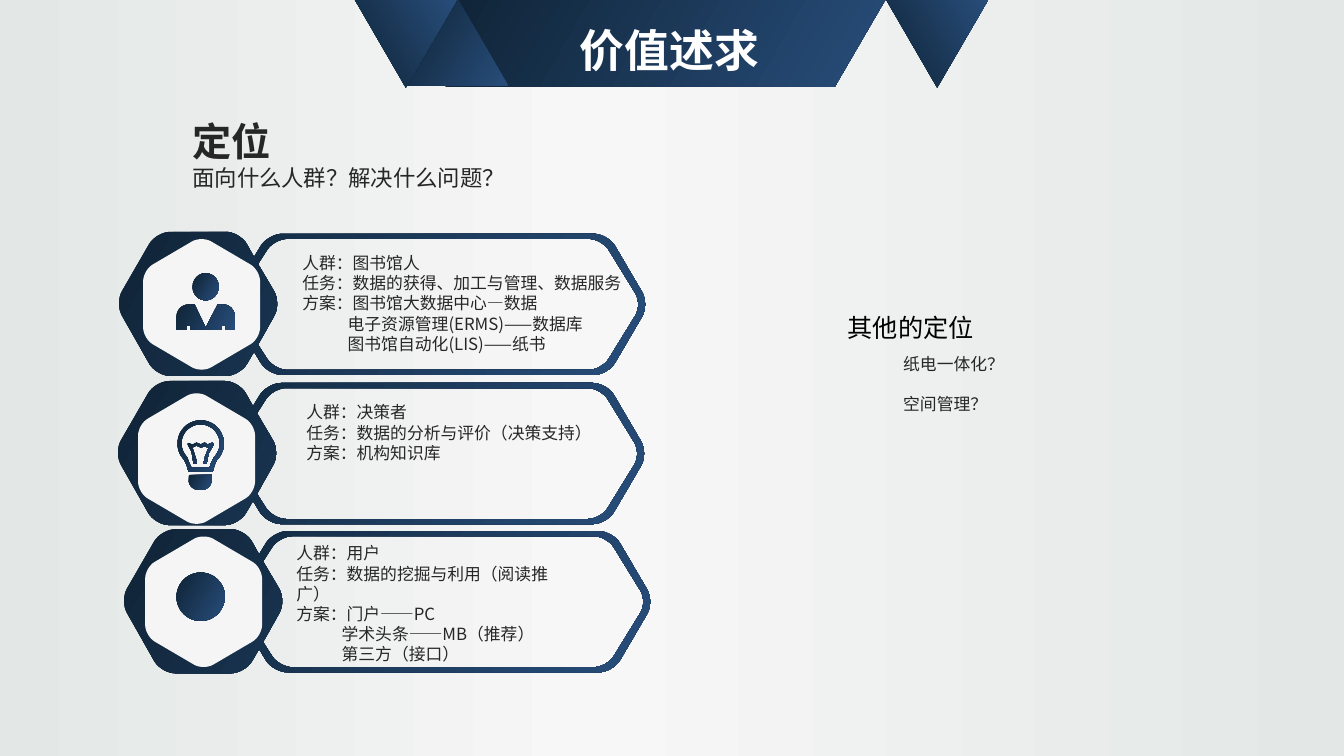
from copy import deepcopy
from math import cos, radians, sin

from pptx import Presentation
from pptx.dml.color import RGBColor
from pptx.enum.shapes import MSO_SHAPE
from pptx.enum.text import MSO_ANCHOR, PP_ALIGN
from pptx.oxml.ns import qn
from pptx.util import Inches, Pt

NAVY = RGBColor(0x0F, 0x24, 0x37)
BLUE = RGBColor(0x28, 0x4D, 0x7A)
PLATE = RGBColor(0xF5, 0xF5, 0xF5)
EDGE_GREY = RGBColor(0xE3, 0xE7, 0xE5)
CENTRE_GREY = RGBColor(0xF7, 0xF7, 0xF7)
INK = RGBColor(0x26, 0x26, 0x26)
BLACK = RGBColor(0, 0, 0)
WHITE = RGBColor(0xFF, 0xFF, 0xFF)
CJK_FONT = "Noto Sans CJK JP"

FRAME_OUTER = [
    (-0.04, 0.71, 0.14), (0.37, 0, 0.14), (1.2, 0, 0.14), (1.34, 0.25, 0),
    (1.48, 0.02, 0.14), (4.85, 0.02, 0.14), (5.26, 0.72, 0.14), (4.85, 1.42, 0.14),
    (1.48, 1.42, 0.14), (1.34, 1.19, 0), (1.2, 1.43, 0.14), (0.37, 1.43, 0.14),
]
FRAME_INNER = [
    (1.54, 0.07, 0.13), (1.38, 0.32, 0), (1.61, 0.71, 0.14), (1.38, 1.12, 0),
    (1.54, 1.37, 0.13), (4.79, 1.37, 0.13), (5.19, 0.72, 0.13), (4.79, 0.07, 0.13),
]
PLATE_HEXAGON = [
    (0, -0.68, 0.11), (0.58, -0.34, 0.11), (0.58, 0.34, 0.11),
    (0, 0.68, 0.11), (-0.58, 0.34, 0.11), (-0.58, -0.34, 0.11),
]
TORSO = [
    (1.75, 3.27, 0), (1.75, 3.02, 0.12), (1.93, 3.02, 0), (2.04, 3.25, 0),
    (2.16, 3.02, 0), (2.33, 3.02, 0.12), (2.33, 3.27, 0), (2.24, 3.27, 0),
    (2.24, 3.23, 0), (2.2, 3.23, 0), (2.2, 3.27, 0), (1.89, 3.27, 0),
    (1.89, 3.23, 0), (1.85, 3.23, 0), (1.85, 3.27, 0),
]
BULB_BASE = [(1.87, 4.71, 0), (2.1, 4.71, 0), (2.1, 4.86, 0.1), (1.87, 4.86, 0.1)]
FILAMENT = [
    (1.86, 4.39), (1.91, 4.41), (1.95, 4.39), (1.99, 4.41), (2.03, 4.39), (2.06, 4.41),
    (2.11, 4.39), (2.12, 4.41), (2.07, 4.5), (2.05, 4.6), (2.02, 4.6), (2.03, 4.54),
    (2.07, 4.44), (2.03, 4.43), (1.99, 4.44), (1.95, 4.42), (1.91, 4.44), (1.95, 4.57),
    (1.95, 4.6), (1.92, 4.6), (1.9, 4.48), (1.86, 4.41),
]
ROWS = [
    ((1.18, 2.3), (2.0, 3.02), (2.9, 2.46, 3.45, 1.2),
     ["人群：图书馆人", "任务：数据的获得、加工与管理、数据服务", "方案：图书馆大数据中心—数据"],
     ["电子资源管理(ERMS)——数据库", "图书馆自动化(LIS)——纸书"]),
    ((1.17, 3.78), (1.95, 4.55), (2.94, 3.94, 3.2, 1.2),
     ["人群：决策者", "任务：数据的分析与评价（决策支持）", "方案：机构知识库"], []),
    ((1.23, 5.25), (2.02, 5.97), (2.84, 5.34, 3.01, 1.3),
     ["人群：用户", "任务：数据的挖掘与利用（阅读推广）", "方案：门户——PC"],
     ["学术头条——MB（推荐）", "第三方（接口）"]),
]


def rounded(corners, left=0, top=0):
    """Return outline points of a polygon whose (x, y, cut) corners are rounded."""
    points = []
    for index, (x, y, cut) in enumerate(corners):
        if not cut:
            points.append((left + x, top + y))
            continue
        ends = []
        for nx, ny, _ in (corners[index - 1], corners[(index + 1) % len(corners)]):
            share = cut / ((nx - x) ** 2 + (ny - y) ** 2) ** 0.5
            ends.append(((nx - x) * share, (ny - y) * share))
        (ax, ay), (bx, by) = ends
        for step in range(9):
            t = step / 8
            start = (1 - t) ** 3 + 1.35 * t * (1 - t) ** 2
            finish = t ** 3 + 1.35 * (1 - t) * t ** 2
            points.append((left + x + ax * start + bx * finish,
                           top + y + ay * start + by * finish))
    return points


def bulb_arc(radius):
    """Return the open arc of the light bulb's glass."""
    angles = [radians(135 + 10 * step) for step in range(28)]
    return [(1.99 + radius * cos(a), 4.4 + radius * sin(a)) for a in angles]


def paint(shape, color=None):
    """Fill a shape with a colour, or with the navy gradient."""
    shape.shadow.inherit = False
    shape.line.fill.background()
    if color is not None:
        shape.fill.solid()
        shape.fill.fore_color.rgb = color
        return
    shape.fill.gradient()
    shape.fill.gradient_angle = 330
    for stop, stop_color, position in zip(shape.fill.gradient_stops, (NAVY, BLUE), (0, 1)):
        stop.color.rgb = stop_color
        stop.position = position


def add_outline(shapes, *contours, color=None):
    """Draw one freeform made of closed contours."""
    scaled = [[(Inches(x), Inches(y)) for x, y in contour] for contour in contours]
    builder = shapes.build_freeform(*scaled[0][0], scale=1.0)
    builder.add_line_segments(scaled[0][1:])
    for contour in scaled[1:]:
        builder.move_to(*contour[0])
        builder.add_line_segments(contour[1:])
    paint(builder.convert_to_shape(), color)


def add_preset(shapes, kind, box, flipped=False):
    """Draw a gradient preset shape."""
    shape = shapes.add_shape(kind, *map(Inches, box))
    paint(shape)
    if flipped:
        shape.element.spPr.find(qn("a:xfrm")).set("flipV", "1")


def style(paragraph, size, color=INK, font=CJK_FONT, bold=False):
    """Format the runs of a paragraph."""
    for run in paragraph.runs:
        run.font.size, run.font.bold, run.font.name = Pt(size), bold, font
        run.font.color.rgb = color
        if font == CJK_FONT:
            latin = run.font._element.find(qn("a:latin"))
            east_asian = latin.makeelement(qn("a:ea"), {"typeface": font})
            latin.addnext(east_asian)


def add_text(slide, box, lines, size=12, **formatting):
    """Add a wrapping text box and return its paragraphs."""
    frame = slide.shapes.add_textbox(*map(Inches, box)).text_frame
    frame.word_wrap = True
    frame.text = "\n".join(lines)
    for paragraph in frame.paragraphs:
        style(paragraph, size, **formatting)
    return frame.paragraphs


def set_background(slide):
    """Give the slide its soft three-stop gradient."""
    fill = slide.background.fill
    fill.gradient()
    fill.gradient_angle = 180
    stop_list = slide.element.find(".//" + qn("a:gsLst"))
    stop_list.append(deepcopy(stop_list[0]))
    colors = (EDGE_GREY, CENTRE_GREY, EDGE_GREY)
    for stop, color, position in zip(fill.gradient_stops, colors, (0.01, 0.56, 1)):
        stop.color.rgb = color
        stop.position = position


def add_header(slide):
    """Draw the banner with the title on top."""
    add_outline(slide.shapes, [(4.42, 0), (8.78, 0), (8.28, 0.86), (4.42, 0.86)])
    for left, top, flipped in ((4.03, -0.02, False), (3.52, 0, True), (8.79, 0, True)):
        add_preset(slide.shapes, MSO_SHAPE.ISOSCELES_TRIANGLE, (left, top, 1.01, 0.87), flipped)
    title = slide.shapes.title
    title.left, title.top, title.width, title.height = map(Inches, (5.65, 0.18, 2.05, 0.64))
    frame = title.text_frame
    frame.text = "价值述求"
    frame.word_wrap = False
    frame.vertical_anchor = MSO_ANCHOR.TOP
    frame.paragraphs[0].alignment = PP_ALIGN.LEFT
    style(frame.paragraphs[0], 32, WHITE, "Arial", True)
    title.element.getparent().append(title.element)


def add_row(slide, origin, plate_centre, box, lines, solutions):
    """Draw one framed row with its plate and text."""
    add_outline(slide.shapes, rounded(FRAME_OUTER, *origin), rounded(FRAME_INNER, *origin))
    add_outline(slide.shapes, rounded(PLATE_HEXAGON, *plate_centre), color=PLATE)
    paragraphs = add_text(slide, box, lines + solutions)
    for paragraph in paragraphs[len(lines):]:
        paragraph._p.get_or_add_pPr().set("marL", str(Inches(0.45)))


def add_icons(slide):
    """Draw the person, the light bulb and the plain disc."""
    person = slide.shapes.add_group_shape().shapes
    add_preset(person, MSO_SHAPE.OVAL, (1.91, 2.71, 0.26, 0.27))
    add_outline(person, rounded(TORSO))
    bulb = slide.shapes.add_group_shape().shapes
    add_outline(bulb,
                bulb_arc(0.23) + [(2.13, 4.61), (2.11, 4.68), (1.87, 4.68), (1.85, 4.61)],
                bulb_arc(0.19) + [(2.09, 4.6), (2.08, 4.64), (1.9, 4.64), (1.88, 4.6)])
    add_outline(bulb, rounded(BULB_BASE))
    add_outline(bulb, FILAMENT)
    add_preset(slide.shapes, MSO_SHAPE.OVAL, (1.75, 5.68, 0.48, 0.48))


def main():
    """Build and save the slide."""
    presentation = Presentation()
    presentation.slide_width, presentation.slide_height = Inches(13.33), Inches(7.5)
    slide = presentation.slides.add_slide(presentation.slide_layouts[5])
    set_background(slide)
    add_header(slide)
    heading = add_text(slide, (1.81, 1.11, 5.17, 0.85), ["定位", "面向什么人群？解决什么问题？"], 16)
    heading[0].runs[0].font.size = Pt(28)
    heading[0].runs[0].font.bold = True
    for row in ROWS:
        add_row(slide, *row)
    add_icons(slide)
    add_text(slide, (8.31, 3.05, 2.34, 0.42), ["其他的定位"], 18, color=BLACK, font="Arial")
    others = add_text(slide, (8.86, 3.46, 3.52, 0.8), ["纸电一体化？", "空间管理？"])
    others[1].space_before = Pt(14.4)
    presentation.save("out.pptx")


if __name__ == "__main__":
    main()
